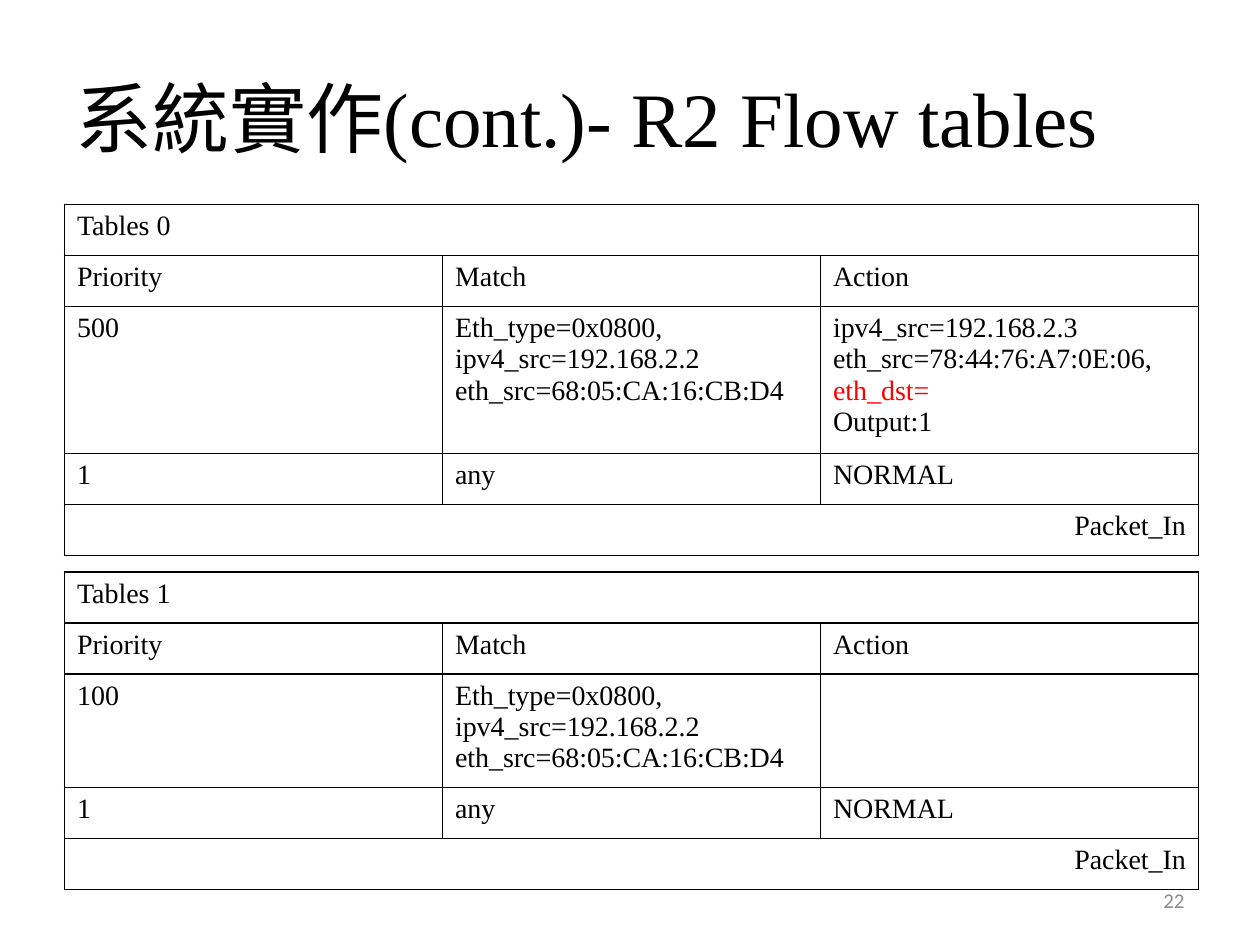
from lxml import etree
from pptx import Presentation
from pptx.dml.color import RGBColor
from pptx.enum.text import MSO_ANCHOR, PP_ALIGN
from pptx.oxml.ns import qn
from pptx.util import Cm, Pt

LEFT, RIGHT = PP_ALIGN.LEFT, PP_ALIGN.RIGHT
MIDDLE = MSO_ANCHOR.MIDDLE
SERIF, SANS = "Times New Roman", "Calibri"
BLACK, RED, GREY = "000000", "FF0000", "8C8C8C"
BORDER_SIDES = ("a:lnL", "a:lnR", "a:lnT", "a:lnB")


def rgb(value):
    return RGBColor.from_string(value)


def write(frame, *paragraphs, size=16, font=SERIF, color=BLACK, align=LEFT):
    for index, runs in enumerate(paragraphs):
        paragraph = frame.paragraphs[0] if index == 0 else frame.add_paragraph()
        paragraph.alignment = align
        for text, run_color in [(runs, color)] if isinstance(runs, str) else runs:
            for number, line in enumerate(text.split("\n")):
                if number:
                    paragraph.add_line_break()
                if line:
                    run = paragraph.add_run()
                    run.text = line
                    run.font.size = Pt(size)
                    run.font.name = font
                    run.font.color.rgb = rgb(run_color)
        for line_break in paragraph._p.findall(qn("a:br")):
            etree.SubElement(line_break, qn("a:rPr"), sz=str(size * 100))


class FlowSlide:
    column_width = 7.62
    row_height = 1.03
    line_height = 0.62
    cell_padding = 0.25

    def __init__(self, deck):
        self.slide = deck.slides.add_slide(deck.slide_layouts[6])

    def text(self, content, left, top, width, height, **style):
        box = self.slide.shapes.add_textbox(Cm(left), Cm(top), Cm(width), Cm(height))
        frame = box.text_frame
        frame.word_wrap = True
        frame.vertical_anchor = MIDDLE
        write(frame, content, **style)

    def border(self, cell):
        cell.fill.background()
        properties = cell._tc.get_or_add_tcPr()
        for position, side in enumerate(BORDER_SIDES):
            line = etree.Element(qn(side), w=str(Pt(1)))
            fill = etree.SubElement(line, qn("a:solidFill"))
            etree.SubElement(fill, qn("a:srgbClr"), val=BLACK)
            properties.insert(position, line)

    def flow_table(self, name, top, priority, match, action, rule_lines):
        rows = [
            [[name]],
            [["Priority"], ["Match"], ["Action"]],
            [[priority], [match], action],
            [["1"], ["any"], ["NORMAL"]],
            [["Packet_In"]],
        ]
        heights = [self.row_height] * len(rows)
        heights[2] = self.cell_padding + self.line_height * rule_lines
        table = self.slide.shapes.add_table(
            len(rows), 3, Cm(1.3), Cm(top), Cm(3 * self.column_width), Cm(sum(heights))
        ).table
        table.first_row = table.horz_banding = False
        for column in table.columns:
            column.width = Cm(self.column_width)
        for row_index, (contents, height) in enumerate(zip(rows, heights)):
            table.rows[row_index].height = Cm(height)
            for column_index in range(3):
                self.border(table.cell(row_index, column_index))
            if len(contents) == 1:
                table.cell(row_index, 0).merge(table.cell(row_index, 2))
            align = RIGHT if row_index == len(rows) - 1 else LEFT
            for column_index, paragraphs in enumerate(contents):
                frame = table.cell(row_index, column_index).text_frame
                write(frame, *paragraphs, align=align)


def main():
    deck = Presentation()
    deck.slide_width, deck.slide_height = Cm(25.4), Cm(19.05)
    page = FlowSlide(deck)
    page.text("系統實作(cont.)- R2 Flow tables", 1.27, 0.76, 22.86, 3.18, size=44)
    page.text("22", 18.2, 17.65, 5.93, 1.01, size=12, font=SANS, color=GREY, align=RIGHT)

    match = "Eth_type=0x0800,\nipv4_src=192.168.2.2\neth_src=68:05:CA:16:CB:D4"
    rewrite = [
        "ipv4_src=192.168.2.3\neth_src=78:44:76:A7:0E:06,",
        [("eth_dst=\n", RED), ("Output:1", BLACK)],
    ]
    page.flow_table("Tables 0", 4.12, "500", match, rewrite, rule_lines=4)
    page.flow_table("Tables 1", 11.53, "100", match, [], rule_lines=3)
    deck.save("out.pptx")


if __name__ == "__main__":
    main()
